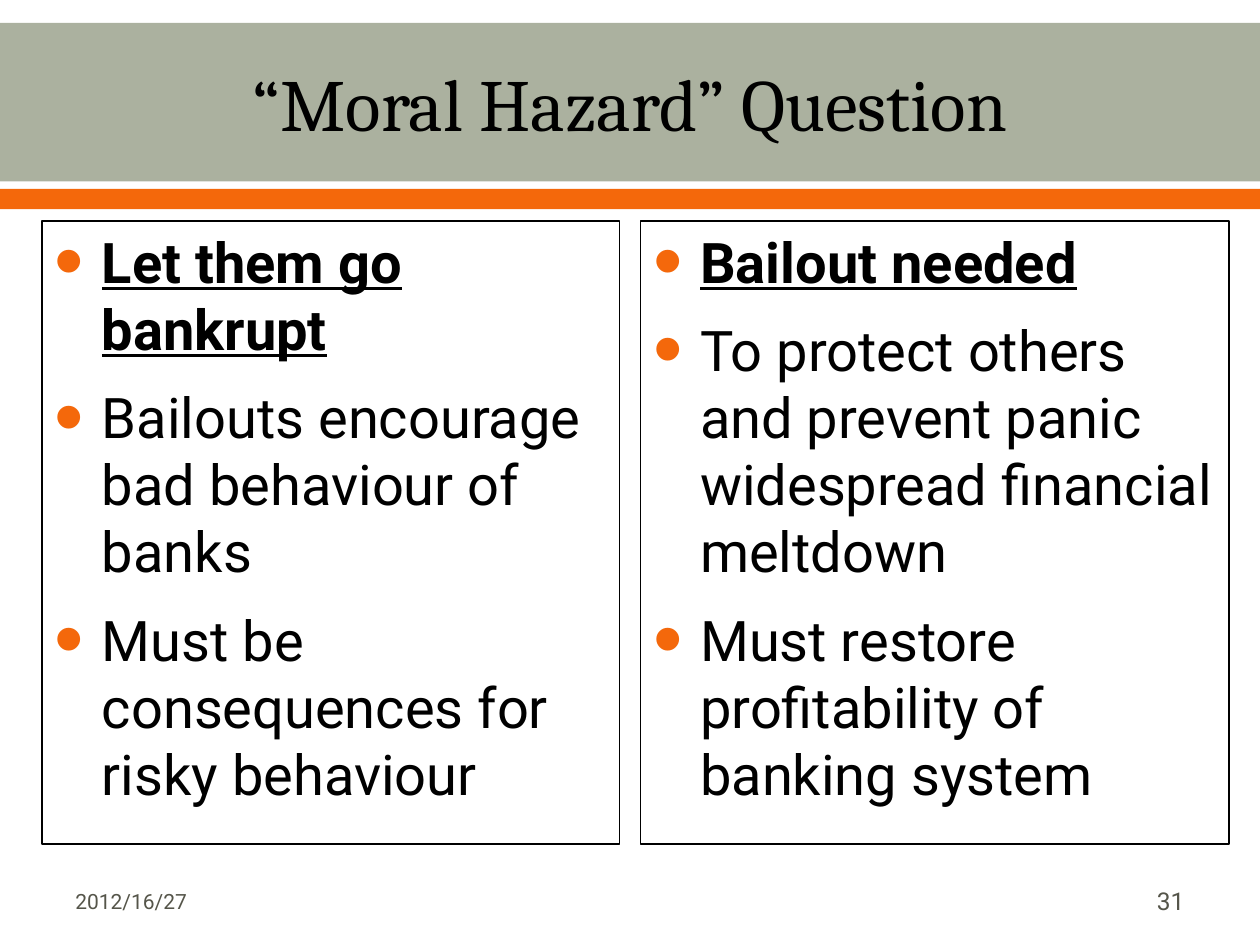
from lxml import etree
from pptx import Presentation
from pptx.dml.color import RGBColor
from pptx.enum.shapes import MSO_SHAPE
from pptx.enum.text import MSO_ANCHOR, MSO_AUTO_SIZE, PP_ALIGN
from pptx.oxml.ns import qn
from pptx.util import Cm, Pt

RECTANGLE = MSO_SHAPE.RECTANGLE
TOP, MIDDLE = MSO_ANCHOR.TOP, MSO_ANCHOR.MIDDLE
LEFT, CENTER, RIGHT = PP_ALIGN.LEFT, PP_ALIGN.CENTER, PP_ALIGN.RIGHT
NO_AUTOFIT = MSO_AUTO_SIZE.NONE

SAGE = RGBColor(0xAB, 0xB1, 0x9F)
ORANGE = RGBColor(0xF4, 0x68, 0x0B)
BLACK = RGBColor(0x00, 0x00, 0x00)
GREY = RGBColor(0x55, 0x55, 0x4A)

TWO_CONTENT_LAYOUT = 3
SLIDE_WIDTH, SLIDE_HEIGHT = Cm(25.4), Cm(19.05)
BULLET_INDENT = Cm(0.95)

LET_FAIL = [
    "Let them go bankrupt",
    "Bailouts encourage bad behaviour of banks",
    "Must be consequences for risky behaviour",
]
BAIL_OUT = [
    "Bailout needed",
    "To protect others and prevent panic widespread financial meltdown",
    "Must restore profitability of banking system",
]


def place(shape, box):
    shape.left, shape.top, shape.width, shape.height = box


def prepare_frame(shape, anchor):
    frame = shape.text_frame
    frame.word_wrap = True
    frame.auto_size = NO_AUTOFIT
    frame.vertical_anchor = anchor
    return frame


def write_text(paragraph, text, *, size, font="Roboto", color=BLACK,
               align=LEFT, emphasis=False):
    """Write one run; emphasis makes it bold and underlined."""
    paragraph.alignment = align
    run = paragraph.add_run()
    run.text = text
    run.font.name = font
    run.font.size = Pt(size)
    run.font.color.rgb = color
    run.font.bold = emphasis
    run.font.underline = emphasis


def add_bullet(paragraph):
    """Give the paragraph a large orange bullet with a hanging indent."""
    properties = paragraph._p.get_or_add_pPr()
    properties.set("marL", str(BULLET_INDENT))
    properties.set("indent", str(-BULLET_INDENT))
    bullet_color = etree.SubElement(properties, qn("a:buClr"))
    etree.SubElement(bullet_color, qn("a:srgbClr"), val=str(ORANGE))
    etree.SubElement(properties, qn("a:buSzPct"), val="150000")
    etree.SubElement(properties, qn("a:buFont"), typeface="Arial")
    etree.SubElement(properties, qn("a:buChar"), char="•")


def add_bar(slide, box, color):
    """Add a plain bar behind the placeholders."""
    bar = slide.shapes.add_shape(RECTANGLE, *box)
    bar.shadow.inherit = False
    bar.fill.solid()
    bar.fill.fore_color.rgb = color
    bar.line.fill.background()
    slide.shapes.title._element.addprevious(bar._element)


def build_header(slide, box, text):
    left, top, width, height = box
    stripe_gap, stripe_height, margin = Cm(0.15), Cm(0.41), Cm(1.27)
    add_bar(slide, box, SAGE)
    add_bar(slide, (left, top + height + stripe_gap, width, stripe_height), ORANGE)
    title = slide.shapes.title
    place(title, (left + margin, top + Cm(0.05), width - 2 * margin, height - Cm(0.1)))
    frame = prepare_frame(title, MIDDLE)
    write_text(frame.paragraphs[0], text, size=42, font="Cambria", align=CENTER)


def build_argument(placeholder, box, points):
    """Fill an outlined list whose first point is its heading."""
    place(placeholder, box)
    placeholder.line.color.rgb = BLACK
    placeholder.line.width = Pt(1)
    frame = prepare_frame(placeholder, TOP)
    for index, point in enumerate(points):
        paragraph = frame.add_paragraph() if index else frame.paragraphs[0]
        paragraph.space_before = Pt(0)
        paragraph.space_after = Pt(12)
        add_bullet(paragraph)
        write_text(paragraph, point, size=32, emphasis=index == 0)


def build_footer(slide, box, date, number):
    left, top, width, height = box
    field_width = Cm(5.92)
    fields = [
        (left, date, 12, LEFT),
        (left + width - field_width, number, 14, RIGHT),
    ]
    for field_left, text, size, align in fields:
        field = slide.shapes.add_textbox(field_left, top, field_width, height)
        frame = prepare_frame(field, MIDDLE)
        write_text(frame.paragraphs[0], text, size=size, color=GREY, align=align)


def main():
    presentation = Presentation()
    presentation.slide_width = SLIDE_WIDTH
    presentation.slide_height = SLIDE_HEIGHT
    slide = presentation.slides.add_slide(
        presentation.slide_layouts[TWO_CONTENT_LAYOUT])

    build_header(slide, (0, Cm(0.46), SLIDE_WIDTH, Cm(3.2)),
                 "“Moral Hazard” Question")
    list_top, list_height = Cm(4.45), Cm(12.57)
    build_argument(slide.placeholders[1],
                   (Cm(0.85), list_top, Cm(11.64), list_height), LET_FAIL)
    build_argument(slide.placeholders[2],
                   (Cm(12.91), list_top, Cm(11.86), list_height), BAIL_OUT)
    build_footer(slide, (Cm(1.27), Cm(17.66), Cm(22.86), Cm(1.01)),
                 "2012/16/27", "31")
    presentation.save("out.pptx")


if __name__ == "__main__":
    main()
